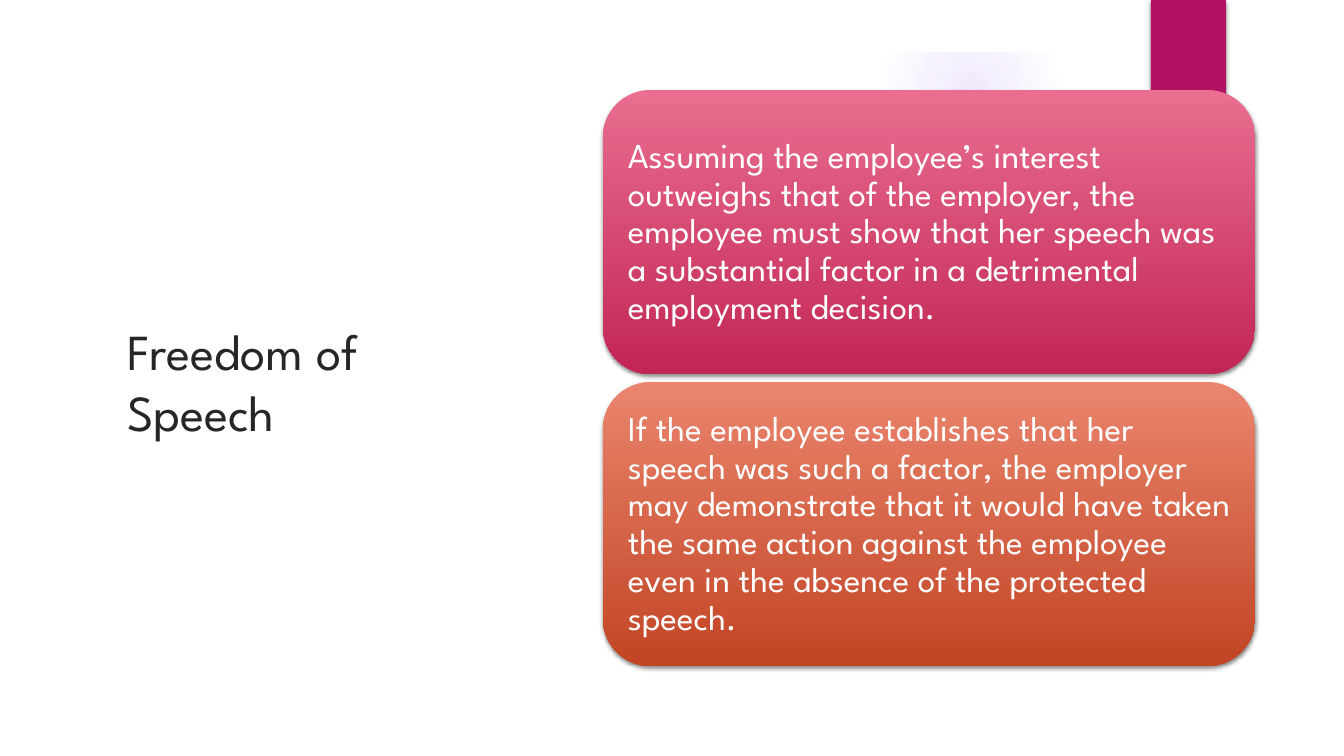
import pptx
import pptx.dml.color
import pptx.enum.shapes
import pptx.enum.text
import pptx.oxml.ns
import pptx.util
from dataclasses import dataclass
from lxml import etree

PX = 914400 / 100.8  # EMU per px
SLIDE_WIDTH, SLIDE_HEIGHT = 1344, 756
SHAPES = pptx.enum.shapes.MSO_SHAPE
qn = pptx.oxml.ns.qn


@dataclass(frozen=True)
class Theme:
    font: str = "League Spartan"
    title_size: int = 36
    card_size: int = 25
    title_ink: str = "262626"
    paper: str = "FFFFFF"
    ribbon: str = "B31166"
    glow: str = "9B6BF2"
    shadow: str = "000000"
    rose: tuple = ("E96E90", "C22655")
    rust: tuple = ("EA856D", "C24525")


THEME = Theme()
CARDS = [
    ("Assuming the employee’s interest outweighs that of the employer, the employee "
     "must show that her speech was a substantial factor in a detrimental employment "
     "decision.", THEME.rose),
    ("If the employee establishes that her speech was such a factor, the employer may "
     "demonstrate that it would have taken the same action against the employee even "
     "in the absence of the protected speech.", THEME.rust),
]


def emu(px):
    return pptx.util.Emu(round(px * PX))


def rgb(color):
    return pptx.dml.color.RGBColor.from_string(color)


def add_child(parent, tag, **attributes):
    return etree.SubElement(parent, qn(tag), attributes)


def add_plain_shape(slide, kind, left, top, width, height):
    shape = slide.shapes.add_shape(kind, emu(left), emu(top), emu(width), emu(height))
    shape.shadow.inherit = False
    shape.line.fill.background()
    return shape


def add_block(slide, kind, color, left, top, width, height):
    block = add_plain_shape(slide, kind, left, top, width, height)
    block.fill.solid()
    block.fill.fore_color.rgb = rgb(color)
    return block


def drop_shadow(shape):
    effects = shape._element.spPr.find(qn("a:effectLst"))
    shadow = add_child(effects, "a:outerShdw", blurRad="38100", dist="25400",
                       dir="5400000", rotWithShape="0")
    color = add_child(shadow, "a:srgbClr", val=THEME.shadow)
    add_child(color, "a:alpha", val="45000")


def add_glow(slide, left, top, size, stops):
    """Circle that fades outwards; stops are (position %, opacity %)."""
    glow = add_plain_shape(slide, SHAPES.OVAL, left, top, size, size)
    glow.fill.gradient()
    gradient = glow._element.spPr.find(qn("a:gradFill"))
    for child in list(gradient):
        gradient.remove(child)
    stop_list = add_child(gradient, "a:gsLst")
    for position, opacity in stops:
        stop = add_child(stop_list, "a:gs", pos=str(position * 1000))
        color = add_child(stop, "a:srgbClr", val=THEME.glow)
        add_child(color, "a:alpha", val=str(opacity * 1000))
    circle = add_child(gradient, "a:path", path="circle")
    add_child(circle, "a:fillToRect", l="50000", t="50000", r="50000", b="50000")


def write(frame, text, size, color):
    frame.word_wrap = True
    frame.auto_size = pptx.enum.text.MSO_AUTO_SIZE.NONE
    frame.vertical_anchor = pptx.enum.text.MSO_ANCHOR.MIDDLE
    paragraph = frame.paragraphs[0]
    paragraph.alignment = pptx.enum.text.PP_ALIGN.LEFT
    run = paragraph.add_run()
    run.text = text
    run.font.name = THEME.font
    run.font.size = pptx.util.Pt(size)
    run.font.color.rgb = rgb(color)
    return paragraph


def place_title(slide, text, left, top, width, height):
    title = slide.shapes.title
    title.left, title.top = emu(left), emu(top)
    title.width, title.height = emu(width), emu(height)
    write(title.text_frame, text, THEME.title_size, THEME.title_ink)


def add_card(slide, text, colors, left, top, width, height):
    card = add_plain_shape(slide, SHAPES.ROUNDED_RECTANGLE, left, top, width, height)
    card.fill.gradient()
    card.fill.gradient_angle = 270  # top to bottom
    for stop, color in zip(card.fill.gradient_stops, colors):
        stop.color.rgb = rgb(color)
    drop_shadow(card)
    frame = card.text_frame
    frame.margin_left, frame.margin_right = emu(11), emu(10)
    frame.margin_top, frame.margin_bottom = emu(11), emu(10)
    paragraph = write(frame, text, THEME.card_size, THEME.paper)
    paragraph.line_spacing = 0.9


def main():
    deck = pptx.Presentation()
    deck.slide_width, deck.slide_height = emu(SLIDE_WIDTH), emu(SLIDE_HEIGHT)
    slide = deck.slides.add_slide(deck.slide_layouts[5])
    slide.background.fill.solid()
    slide.background.fill.fore_color.rgb = rgb(THEME.paper)

    # Backdrop: soft glow cut off by the white border, and the corner ribbon
    add_glow(slide, 882, 1, 176, [(0, 14), (36, 7), (73, 0), (100, 0)])
    border = add_block(slide, SHAPES.FRAME, THEME.paper, 0, 0, SLIDE_WIDTH, SLIDE_HEIGHT)
    border.adjustments[0] = 52 / SLIDE_HEIGHT
    ribbon = add_block(slide, SHAPES.RECTANGLE, THEME.ribbon, 1151, 0, 75, 126)
    drop_shadow(ribbon)

    # Title
    place_title(slide, "Freedom of Speech", 117, 117, 279, 528)

    # Stacked cards
    card_top, card_height, gap = 90, 284, 8
    for index, (text, colors) in enumerate(CARDS):
        top = card_top + index * (card_height + gap)
        add_card(slide, text, colors, 603, top, 652, card_height)

    deck.save("out.pptx")


if __name__ == "__main__":
    main()
